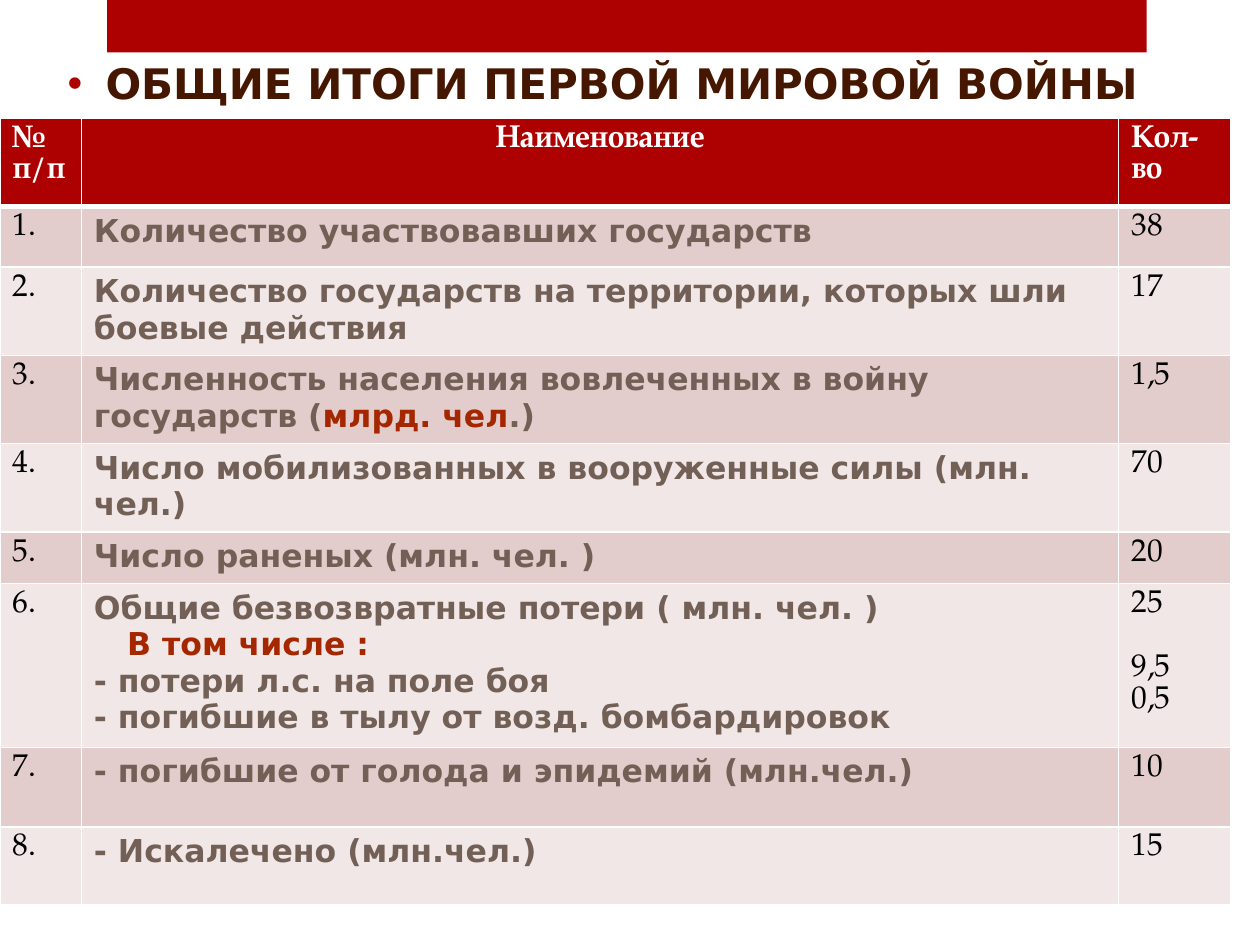
from dataclasses import dataclass
from typing import NamedTuple

from lxml.etree import SubElement
from pptx import Presentation
from pptx.dml.color import RGBColor
from pptx.enum.shapes import MSO_SHAPE
from pptx.enum.text import MSO_ANCHOR, PP_ALIGN
from pptx.oxml.ns import qn
from pptx.util import Pt


@dataclass(frozen=True)
class Theme:
    red: str = "AD0101"
    title: str = "461700"
    label: str = "726056"
    accent: str = "A42700"
    ink: str = "000000"
    white: str = "FFFFFF"
    bands: tuple = ("E3CCCC", "F1E7E7")
    serif: str = "TeX Gyre Pagella"
    sans: str = "DejaVu Sans"
    title_size: int = 24
    body_size: int = 18


T = Theme()


class Run(NamedTuple):
    text: str
    color: str = T.label


class Para(NamedTuple):
    runs: list
    indent: float = 0
    before: float = 0


class Row(NamedTuple):
    height: float
    label: list
    values: list


def line(text: str, color: str = T.label, indent: float = 0, before: float = 0) -> Para:
    return Para([Run(text, color)], indent, before)


def value(text: str, before: float = 0) -> Para:
    return line(text, T.ink, before=before)


TWO_LINES = 44.64
ROWS = [
    Row(34.56, [line("Количество участвовавших государств")], [value("38")]),
    Row(TWO_LINES,
        [line("Количество государств на территории, которых шли боевые действия")],
        [value("17")]),
    Row(TWO_LINES,
        [Para([Run("Численность населения вовлеченных в войну государств ("),
               Run("млрд. чел", T.accent), Run(".)")])], [value("1,5")]),
    Row(TWO_LINES, [line("Число мобилизованных в вооруженные силы (млн. чел.)")],
        [value("70")]),
    Row(29.52, [line("Число раненых (млн. чел. )")], [value("20")]),
    Row(93.6, [line("Общие безвозвратные потери ( млн. чел. )"),
               line("В том числе :", T.accent, indent=19),
               line("- потери л.с. на поле боя"),
               line("- погибшие в тылу от возд. бомбардировок")],
        [value("25"), value("9,5", before=18.3), value("0,5")]),
    Row(45.36, [line("- погибшие от голода и эпидемий (млн.чел.)")], [value("10")]),
    Row(TWO_LINES, [line("- Искалечено (млн.чел.)")], [value("15")]),
]
TABLE_HEIGHT = 460.8
COLUMNS = (46.5, 592.8, 64)
HEADINGS = ("№ п/п", "Наименование", "Кол-во")


def write(p, text: str, *, font: str = T.serif, size: float = T.body_size,
          color: str = T.ink, bold: bool = False) -> None:
    r = p.add_run()
    r.text = text
    r.font.name, r.font.size, r.font.bold = font, Pt(size), bold
    r.font.color.rgb = RGBColor.from_string(color)


def add_bullet(p, color: str, hang: float) -> None:
    pPr = p._p.get_or_add_pPr()
    pPr.set("marL", str(Pt(hang)))
    pPr.set("indent", str(-Pt(hang)))
    SubElement(SubElement(pPr, qn("a:buClr")), qn("a:srgbClr"), val=color)
    SubElement(pPr, qn("a:buFont"), typeface="Arial")
    SubElement(pPr, qn("a:buChar"), char="•")


def style_cell(cell, fill: str, top: float = 1, bottom: float = 1) -> None:
    tcPr = cell._tc.get_or_add_tcPr()
    for tag, width in (("lnL", 1), ("lnR", 1), ("lnT", top), ("lnB", bottom)):
        ln = SubElement(tcPr, qn(f"a:{tag}"), w=str(Pt(width)))
        SubElement(SubElement(ln, qn("a:solidFill")), qn("a:srgbClr"), val=T.white)
    cell.fill.solid()
    cell.fill.fore_color.rgb = RGBColor.from_string(fill)


def fill_cell(cell, paras: list, font: str = T.serif, bold: bool = False) -> None:
    tf = cell.text_frame
    for i, para in enumerate(paras):
        p = tf.add_paragraph() if i else tf.paragraphs[0]
        if para.indent:
            p._p.get_or_add_pPr().set("marL", str(Pt(para.indent)))
        if para.before:
            p.space_before = Pt(para.before)
        for run in para.runs:
            write(p, run.text, font=font, color=run.color, bold=bold)


def add_band(s) -> None:
    sp = s.shapes.add_shape(MSO_SHAPE.RECTANGLE, Pt(61.2), Pt(0), Pt(594), Pt(30))
    sp.shadow.inherit = False
    sp.fill.solid()
    sp.fill.fore_color.rgb = RGBColor.from_string(T.red)
    sp.line.fill.background()


def add_title(s) -> None:
    tf = s.shapes.add_textbox(Pt(0), Pt(33), Pt(689), Pt(29)).text_frame
    tf.word_wrap = True
    tf.vertical_anchor = MSO_ANCHOR.MIDDLE
    tf.margin_top = tf.margin_bottom = 0
    p = tf.paragraphs[0]
    p.alignment = PP_ALIGN.CENTER
    add_bullet(p, T.red, 21.6)
    write(p, "ОБЩИЕ ИТОГИ ПЕРВОЙ МИРОВОЙ ВОЙНЫ", font=T.sans, size=T.title_size,
          color=T.title, bold=True)


def add_results(s) -> None:
    heights = [TWO_LINES] + [row.height for row in ROWS]
    frame = s.shapes.add_table(len(heights), len(COLUMNS), Pt(0), Pt(67.7),
                               Pt(sum(COLUMNS)), Pt(TABLE_HEIGHT))
    table = frame.table
    for col, width in zip(table.columns, COLUMNS):
        col.width = Pt(width)
    for row, height in zip(table.rows, heights):
        row.height = Pt(height)
    frame.height = Pt(TABLE_HEIGHT)

    # Heading row
    for c, heading in enumerate(HEADINGS):
        cell = table.cell(0, c)
        style_cell(cell, T.red, bottom=3)
        fill_cell(cell, [line(heading, T.white)], bold=True)
    table.cell(0, 1).text_frame.paragraphs[0].alignment = PP_ALIGN.CENTER

    # Numbered rows in alternating bands
    for n, row in enumerate(ROWS, start=1):
        for c in range(len(COLUMNS)):
            style_cell(table.cell(n, c), T.bands[(n - 1) % 2], top=3 if n == 1 else 1)
        fill_cell(table.cell(n, 0), [value(f"{n}.")])
        fill_cell(table.cell(n, 1), row.label, font=T.sans, bold=True)
        fill_cell(table.cell(n, 2), row.values)


def main() -> None:
    prs = Presentation()
    prs.slide_width, prs.slide_height = Pt(720), Pt(540)
    s = prs.slides.add_slide(prs.slide_layouts[6])
    add_band(s)
    add_title(s)
    add_results(s)
    prs.save("out.pptx")


if __name__ == "__main__":
    main()
